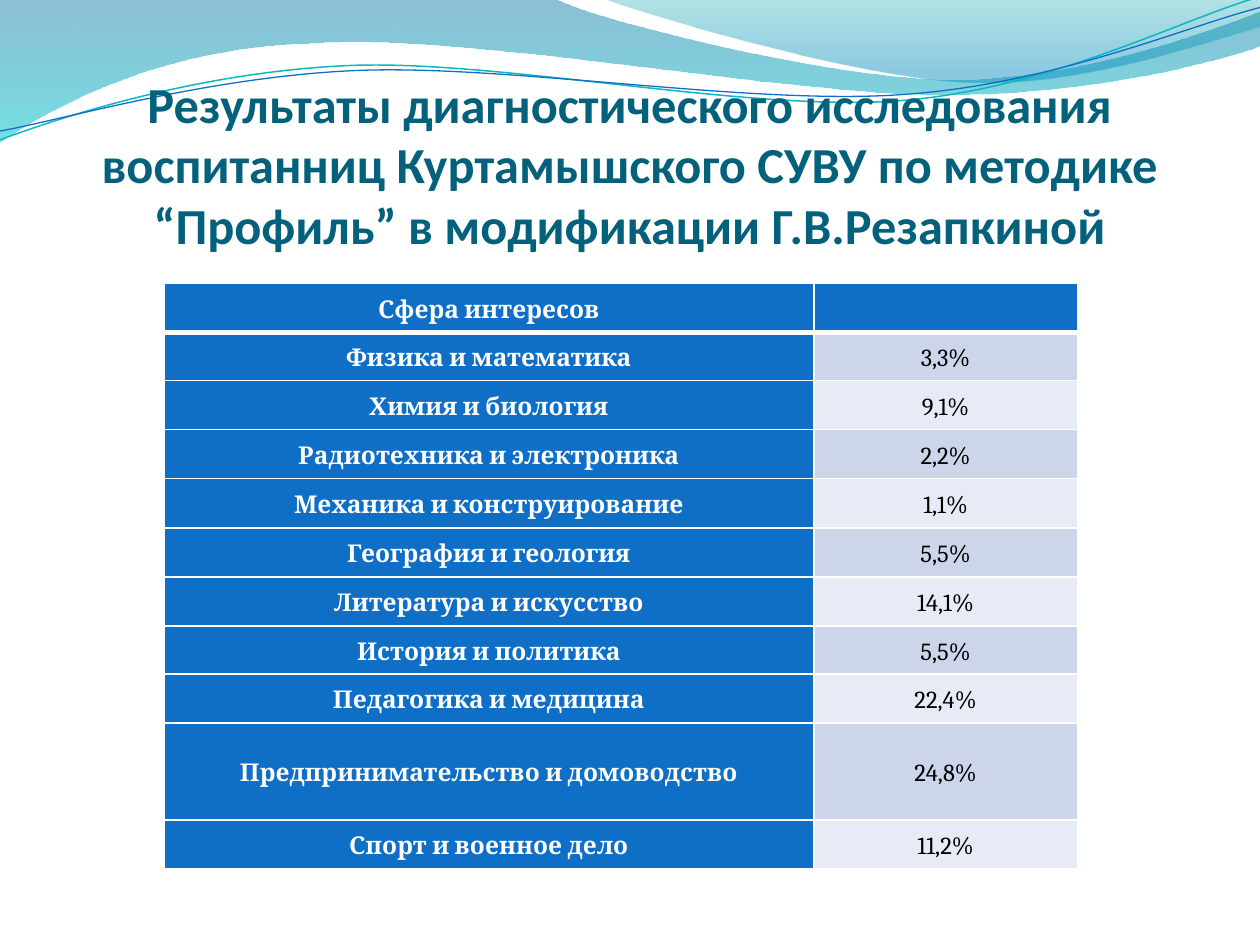
from math import cos, radians, sin

from lxml.etree import SubElement
from pptx import Presentation
from pptx.dml.color import RGBColor
from pptx.enum.text import MSO_ANCHOR, MSO_AUTO_SIZE, PP_ALIGN
from pptx.oxml import parse_xml
from pptx.oxml.ns import nsdecls, qn
from pptx.util import Inches, Pt

BLUE, WHITE, BLACK, TEAL = "0F6FC6", "FFFFFF", "000000", "04617B"
BANDS = ["CCD5EA", "E7EBF5"]
STRAND_TILT = -2.7

# Each outline is a start point followed by lines (2 numbers) and curves (6 numbers).
WIDE_WAVE = [(0, 0), (4.4, -0.01), (4.76, 0.17, 6.64, 0.63, 7.58, 0.63),
             (8.53, 0.63, 9.58, 0.26, 10, 0.09), (10.01, 0.36),
             (9.83, 0.44, 8.7, 0.76, 7.46, 0.75),
             (6.22, 0.75, 3.82, 0.28, 2.57, 0.34),
             (1.29, 0.36, 0.46, 0.83, -0.01, 1.13), (0, 0)]
CORNER_WAVE = [(4.79, -0.01), (5.09, 0.11, 6.82, 0.62, 7.69, 0.65),
               (8.56, 0.69, 9.61, 0.32, 10, 0.21), (10, 0), (4.79, -0.01)]
TEAL_STRAND = [(0, 1.11), (0.48, 0.93, 1.58, 0.57, 2.77, 0.52),
               (3.95, 0.47, 5.93, 0.89, 7.13, 0.8),
               (8.33, 0.71, 9.38, 0.15, 9.98, -0.02)]
BLUE_STRAND = [(0, 1.04), (0.47, 0.96, 1.64, 0.61, 2.83, 0.56),
               (4.03, 0.51, 5.97, 0.84, 7.17, 0.75),
               (8.36, 0.67, 9.41, 0.21, 10, 0.06)]

TITLE = ("Результаты диагностического исследования воспитанниц Куртамышского "
         "СУВУ по методике “Профиль” в модификации Г.В.Резапкиной")
INTERESTS = [
    ("Сфера интересов", ""),
    ("Физика и математика", "3,3%"),
    ("Химия и биология", "9,1%"),
    ("Радиотехника и электроника", "2,2%"),
    ("Механика и конструирование", "1,1%"),
    ("География и геология", "5,5%"),
    ("Литература и искусство", "14,1%"),
    ("История и политика", "5,5%"),
    ("Педагогика и медицина", "22,4%"),
    ("Предпринимательство и домоводство", "24,8%"),
    ("Спорт и военное дело", "11,2%"),
]
COLUMN_WIDTHS = [5.16, 2.09]
ROW_HEIGHT = 0.39
SPECIAL_ROW_HEIGHTS = {1: 0.38, 7: 0.38, 9: 0.77}


def rgb(color):
    return RGBColor.from_string(color)


def set_format(target, values):
    for name, value in values.items():
        setattr(target, name, value)


def turn(point, center, degrees):
    angle = radians(degrees)
    dx, dy = point[0] - center[0], point[1] - center[1]
    return (center[0] + dx * cos(angle) - dy * sin(angle),
            center[1] + dx * sin(angle) + dy * cos(angle))


def add_outline(slide, segments, close, center=(0, 0), tilt=0):
    """Draw lines and Bezier curves, kept in place when the shape is tilted."""
    points = [turn(segment[i:i + 2], center, -tilt)
              for segment in segments for i in range(0, len(segment), 2)]
    start, *rest = [(Inches(x), Inches(y)) for x, y in points]
    builder = slide.shapes.build_freeform(*start)
    builder.add_line_segments(rest, close=close)
    outline = builder.convert_to_shape()
    outline.shadow.inherit = False
    outline.rotation = tilt
    steps = iter(list(outline._element.iter(qn("a:lnTo"))))
    for segment in segments[1:]:
        step = next(steps)
        if len(segment) == 6:
            step.addprevious(curve := parse_xml(f'<a:cubicBezTo {nsdecls("a")}/>'))
            for corner in (step, next(steps), next(steps)):
                curve.append(corner[0])
                corner.getparent().remove(corner)
    return outline


def add_wave(slide, segments, stops):
    """Fill a wave downwards through (position, colour, opacity %) stops."""
    wave = add_outline(slide, segments, close=True)
    wave.line.fill.background()
    wave.fill.gradient()
    wave.fill.gradient_angle = 270
    for stop, (position, color, _) in zip(wave.fill.gradient_stops, stops):
        stop.position = position
        stop.color.rgb = rgb(color)
    for tint, (_, _, opacity) in zip(wave._element.spPr.iter(qn("a:srgbClr")), stops):
        SubElement(tint, qn("a:alpha"), val=str(opacity * 1000))


def add_strand(slide, segments, center, color, width):
    strand = add_outline(slide, segments, False, center, STRAND_TILT)
    strand.fill.background()
    strand.line.color.rgb = rgb(color)
    strand.line.width = Pt(width)


def write(paragraph, text, color, font):
    paragraph.alignment = PP_ALIGN.CENTER
    run = paragraph.add_run()
    run.text = text
    set_format(run.font, font)
    run.font.color.rgb = rgb(color)


def add_title(slide):
    frame = slide.shapes.add_textbox(Inches(0.5), Inches(0.77),
                                     Inches(9), Inches(1.25)).text_frame
    set_format(frame, {"word_wrap": True, "auto_size": MSO_AUTO_SIZE.NONE,
                       "vertical_anchor": MSO_ANCHOR.BOTTOM, "margin_left": 0,
                       "margin_right": 0, "margin_top": Inches(0.05),
                       "margin_bottom": 0})
    write(frame.paragraphs[0], TITLE, TEAL,
          {"name": "Calibri", "size": Pt(28.8), "bold": True})


def set_borders(cell, widths):
    properties = cell._tc.get_or_add_tcPr()
    for index, (side, width) in enumerate(widths.items()):
        properties.insert(index, parse_xml(
            f'<a:ln{side} {nsdecls("a")} w="{Pt(width)}"><a:solidFill>'
            f'<a:srgbClr val="{WHITE}"/></a:solidFill></a:ln{side}>'))


def fill_cell(cell, text, row, column):
    is_label = row == 0 or column == 0
    set_format(cell, {"margin_left": 0, "margin_right": 0, "margin_top": 0,
                      "margin_bottom": 0, "vertical_anchor": MSO_ANCHOR.MIDDLE})
    cell.fill.solid()
    cell.fill.fore_color.rgb = rgb(BLUE if is_label else BANDS[(row - 1) % 2])
    set_borders(cell, {"L": 1, "R": 1, "T": 3 if row == 1 else 1,
                       "B": 3 if row == 0 else 1})
    if text:
        paragraph = cell.text_frame.paragraphs[0]
        set_format(paragraph, {"line_spacing": 1.15, "space_after": Pt(10)})
        write(paragraph, text, WHITE if is_label else BLACK,
              {"name": "Cambria", "size": Pt(14), "bold": is_label})


def add_interest_table(slide):
    table = slide.shapes.add_table(len(INTERESTS), len(COLUMN_WIDTHS), Inches(1.3),
                                   Inches(2.25), Inches(7.24), Inches(4.65)).table
    for column, width in zip(table.columns, COLUMN_WIDTHS):
        column.width = Inches(width)
    for row, texts in enumerate(INTERESTS):
        table.rows[row].height = Inches(SPECIAL_ROW_HEIGHTS.get(row, ROW_HEIGHT))
        for column, text in enumerate(texts):
            fill_cell(table.cell(row, column), text, row, column)


def main():
    presentation = Presentation()
    set_format(presentation, {"slide_width": Inches(10), "slide_height": Inches(7.5)})
    slide = presentation.slides.add_slide(presentation.slide_layouts[6])
    add_wave(slide, WIDE_WAVE, [(0, "0074A1", 45), (1, "00C6CF", 55)])
    add_wave(slide, CORNER_WAVE, [(0, "00A1A9", 30), (0.8, "008BBF", 45)])
    add_strand(slide, TEAL_STRAND, (4.99, 0.58), "0AB8BF", 0.85)
    add_strand(slide, BLUE_STRAND, (5, 0.59), BLUE, 0.75)
    add_title(slide)
    add_interest_table(slide)
    presentation.save("out.pptx")


if __name__ == "__main__":
    main()
